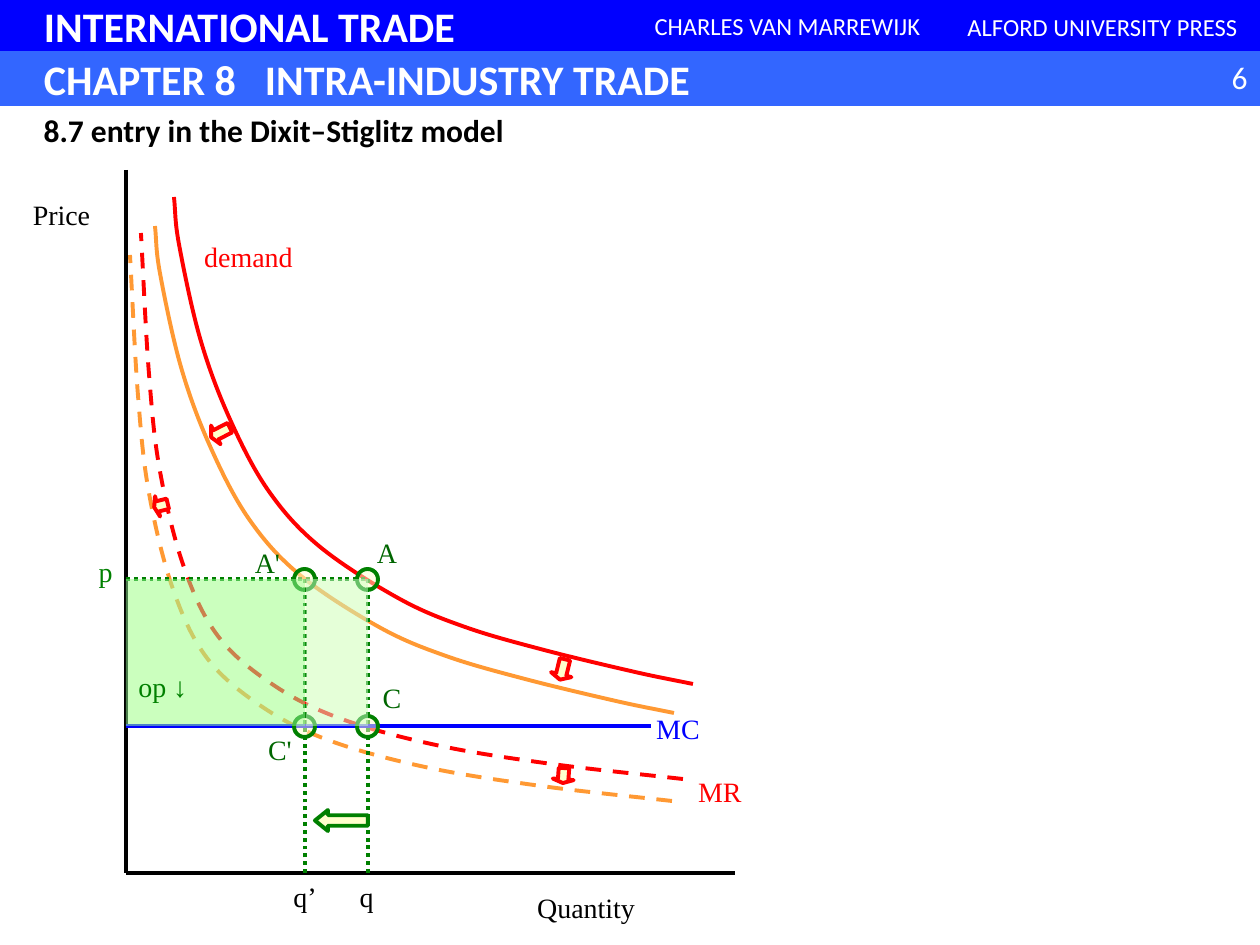
import lxml.etree
import pptx
import pptx.dml.color
import pptx.enum.dml
import pptx.enum.shapes
import pptx.enum.text
import pptx.oxml.ns
import pptx.util

RGBColor = pptx.dml.color.RGBColor
SHAPE = pptx.enum.shapes.MSO_SHAPE
DASH = pptx.enum.dml.MSO_LINE
ALIGN = pptx.enum.text.PP_ALIGN
ANCHOR = pptx.enum.text.MSO_ANCHOR
AUTO_SIZE = pptx.enum.text.MSO_AUTO_SIZE
qn = pptx.oxml.ns.qn

EMU_PER_PX = 914400 / 126
BLACK = RGBColor(0x00, 0x00, 0x00)
WHITE = RGBColor(0xFF, 0xFF, 0xFF)
BLUE = RGBColor(0x00, 0x00, 0xFF)
LIGHT_BLUE = RGBColor(0x33, 0x66, 0xFF)
RED = RGBColor(0xFF, 0x00, 0x00)
ORANGE = RGBColor(0xFF, 0x99, 0x33)
GREEN = RGBColor(0x00, 0x80, 0x00)
DARK_GREEN = RGBColor(0x00, 0x66, 0x00)
CREAM = RGBColor(0xFF, 0xFF, 0xCC)
MINT = RGBColor(0x99, 0xFF, 0x99)
PALE_MINT = RGBColor(0xCC, 0xFF, 0xCC)
SERIF, SANS = "Times New Roman", "Calibri"

# Content: header bars as text, box, fill, size, bold, alignment
TITLE = "8.7 entry in the Dixit–Stiglitz model"
HEADERS = [
    ("INTERNATIONAL TRADE", (0, 0, 1260, 52), BLUE, 24, True, ALIGN.LEFT),
    ("CHARLES VAN MARREWIJK", (630, 0, 315, 52), BLUE, 14, False, ALIGN.CENTER),
    ("ALFORD UNIVERSITY PRESS", (945, 1, 315, 51), BLUE, 14, False, ALIGN.CENTER),
    ("CHAPTER 8\tINTRA-INDUSTRY TRADE", (0, 52, 1260, 53), LIGHT_BLUE, 24, True, ALIGN.LEFT),
]

# Content: key positions on the diagram
AXIS_X, AXIS_TOP, AXIS_Y, AXIS_RIGHT = 126, 170, 873, 735
PRICE_Y, COST_Y = 579, 726
NEW_Q, OLD_Q = 305, 368

# Content: points the curves pass through, and the shift caused by entry
DEMAND = [(693, 684), (635, 672), (544, 650), (465, 627), (398, 598), (319, 546),
          (268, 490), (229, 417), (200, 338), (179, 244), (174, 197)]
REVENUE = [(683, 779), (552, 764), (436, 745), (339, 718), (272, 684),
           (218, 636), (184, 567), (160, 471), (149, 373), (141, 233)]
CURVES = [(REVENUE, (-11, 22), DASH.DASH), (DEMAND, (-19, 29), None)]

LINES = [
    ((AXIS_X, AXIS_TOP), (AXIS_X, AXIS_Y), BLACK, None),
    ((AXIS_X, AXIS_Y), (AXIS_RIGHT, AXIS_Y), BLACK, None),
    ((AXIS_X, COST_Y), (651, COST_Y), BLUE, None),
    ((OLD_Q, PRICE_Y), (OLD_Q, AXIS_Y), GREEN, DASH.ROUND_DOT),
    ((AXIS_X, PRICE_Y), (OLD_Q, PRICE_Y), GREEN, DASH.ROUND_DOT),
    ((NEW_Q, AXIS_Y), (NEW_Q, PRICE_Y), GREEN, DASH.ROUND_DOT),
]

# Block arrows: box, rotation, head length ratio, line colour
ARROWS = [
    ((210, 422, 21, 21), 333, 0.25, RED),
    ((552, 659, 21, 21), 283.8, 0.25, RED),
    ((556, 765, 15, 21), 274.3, 0.25, RED),
    ((154, 495, 14, 21), 346.1, 0.25, RED),
    ((315, 810, 53, 21), 0, 0.62, GREEN),
]

# Labels: text, left, top, width, colour
LABELS = [
    ("Price", 13, 191, 97, BLACK), ("Quantity", 515, 884, 142, BLACK),
    ("MC", 641, 705, 74, BLUE), ("demand", 179, 233, 139, RED), ("MR", 683, 768, 74, RED),
    ("q", 345, 873, 43, BLACK), ("q’", 280, 873, 50, BLACK), ("p", 84, 548, 43, GREEN),
    ("C", 368, 674, 48, DARK_GREEN), ("C'", 253, 726, 54, DARK_GREEN),
    ("A", 363, 529, 48, DARK_GREEN), ("A'", 241, 539, 53, DARK_GREEN),
]

presentation = pptx.Presentation()
presentation.slide_width = pptx.util.Inches(10)
presentation.slide_height = pptx.util.Inches(7.5)
slide = presentation.slides.add_slide(presentation.slide_layouts[5])
shapes = slide.shapes


def px(*lengths):
    return [pptx.util.Emu(round(length * EMU_PER_PX)) for length in lengths]


def style_line(line, color, dash=None, width=2.25):
    line.color.rgb = color
    line.width = pptx.util.Pt(width)
    if dash is not None:
        line.dash_style = dash


def add_shape(kind, box, fill, outline=None, alpha=None, width=2.25):
    shape = shapes.add_shape(kind, *px(*box))
    shape.shadow.inherit = False
    shape.fill.solid()
    shape.fill.fore_color.rgb = fill
    if alpha is not None:
        color = shape._element.spPr.find(qn("a:solidFill")).find(qn("a:srgbClr"))
        lxml.etree.SubElement(color, qn("a:alpha"), val=str(alpha * 1000))
    if outline is None:
        shape.line.fill.background()
    else:
        style_line(shape.line, outline, width=width)
    return shape


def set_text(shape, text, size, color, font=SERIF, bold=False, align=ALIGN.CENTER):
    frame = shape.text_frame
    frame.text = text
    paragraph = frame.paragraphs[0]
    paragraph.alignment = align
    paragraph.font.size = pptx.util.Pt(size)
    paragraph.font.name = font
    paragraph.font.bold = bold
    paragraph.font.color.rgb = color
    return frame


def add_text(box, *text_style, **options):
    frame = set_text(shapes.add_textbox(*px(*box)), *text_style, **options)
    frame.word_wrap = False
    frame.auto_size = AUTO_SIZE.SHAPE_TO_FIT_TEXT


def control_points(points):
    """Two Bezier handles for each segment of a smooth curve through the points."""
    def reflect(end, inner):
        return tuple(2 * a - b for a, b in zip(end, inner))
    chain = [reflect(points[0], points[1]), *points, reflect(points[-1], points[-2])]
    for before, start, end, after in zip(chain, chain[1:], chain[2:], chain[3:]):
        yield (tuple(b + (c - a) / 6 for a, b, c in zip(before, start, end)),
               tuple(c - (d - b) / 6 for b, c, d in zip(start, end, after)))


def add_curve(points, color, dash):
    corners = [tuple(px(*point)) for point in points]
    builder = shapes.build_freeform(*corners[0], scale=1.0)
    builder.add_line_segments(corners[1:], close=False)
    curve = builder.convert_to_shape()
    # Turn each straight segment into a Bezier segment
    segments = list(curve._element.iter(qn("a:lnTo")))
    for segment, handles in zip(segments, control_points(corners)):
        segment.tag = qn("a:cubicBezTo")
        for index, (x, y) in enumerate(handles):
            handle = lxml.etree.Element(
                qn("a:pt"), x=str(round(x - curve.left)), y=str(round(y - curve.top)))
            segment.insert(index, handle)
    curve.shadow.inherit = False
    curve.fill.background()
    style_line(curve.line, color, dash)


# Header bars, page number and title
for text, box, fill, size, bold, align in HEADERS:
    bar = add_shape(SHAPE.RECTANGLE, box, fill, fill, width=0.75)
    frame = set_text(bar, text, size, WHITE, SANS, bold, align)
    frame.vertical_anchor = ANCHOR.MIDDLE
    frame.word_wrap = True
    if align == ALIGN.LEFT:
        frame.margin_left = px(44)[0]
    if "\t" in text:
        properties = frame.paragraphs[0]._p.get_or_add_pPr()
        tabs = lxml.etree.Element(qn("a:tabLst"))
        lxml.etree.SubElement(tabs, qn("a:tab"), pos=str(px(221)[0]), algn="l")
        properties.find(qn("a:defRPr")).addprevious(tabs)
add_text((1176, 52, 84, 50), "6", 18, WHITE, font=SANS, align=ALIGN.RIGHT)

title = shapes.title
title.left, title.top, title.width, title.height = px(31, 105, 495, 50)
frame = set_text(title, TITLE, 18, BLACK, SANS, True, ALIGN.LEFT)
frame.vertical_anchor = ANCHOR.TOP
frame.word_wrap = False
frame.auto_size = AUTO_SIZE.NONE

# Profit area before entry
height = COST_Y - PRICE_Y
add_shape(SHAPE.RECTANGLE, (AXIS_X, PRICE_Y, OLD_Q - AXIS_X, height), CREAM, alpha=50)

# Curves before and after entry
for points, (shift_x, shift_y), dash in CURVES:
    add_curve(points, RED, dash)
    add_curve([(x + shift_x, y + shift_y) for x, y in points], ORANGE, dash)

# Axes, marginal cost and guide lines
for start, end, color, dash in LINES:
    connector = shapes.add_connector(pptx.enum.shapes.MSO_CONNECTOR.STRAIGHT, *px(*start, *end))
    style_line(connector.line, color, dash)
    lxml.etree.SubElement(connector._element.spPr, qn("a:effectLst"))

# Equilibrium rings
for x in (OLD_Q, NEW_Q):
    for y in (PRICE_Y, COST_Y):
        add_shape(SHAPE.OVAL, (x - 11, y - 10, 21, 21), CREAM, GREEN, alpha=50)

# Shift arrows
for box, rotation, head, color in ARROWS:
    arrow = add_shape(SHAPE.LEFT_ARROW, box, CREAM, color)
    arrow.rotation = rotation
    arrow.adjustments[1] = head

for text, left, top, width, color in LABELS:
    add_text((left, top, width, 50), text, 16, color)

# Profit remaining after entry, and profit lost
remaining = add_shape(SHAPE.RECTANGLE, (AXIS_X, PRICE_Y, NEW_Q - AXIS_X, height), MINT, alpha=50)
frame = set_text(remaining, "op ↓", 16, GREEN, align=ALIGN.LEFT)
frame.vertical_anchor = ANCHOR.BOTTOM
frame.margin_bottom = px(23)[0]
add_shape(SHAPE.RECTANGLE, (NEW_Q + 1, PRICE_Y, OLD_Q - NEW_Q - 1, height), PALE_MINT, alpha=50)

presentation.save("out.pptx")
